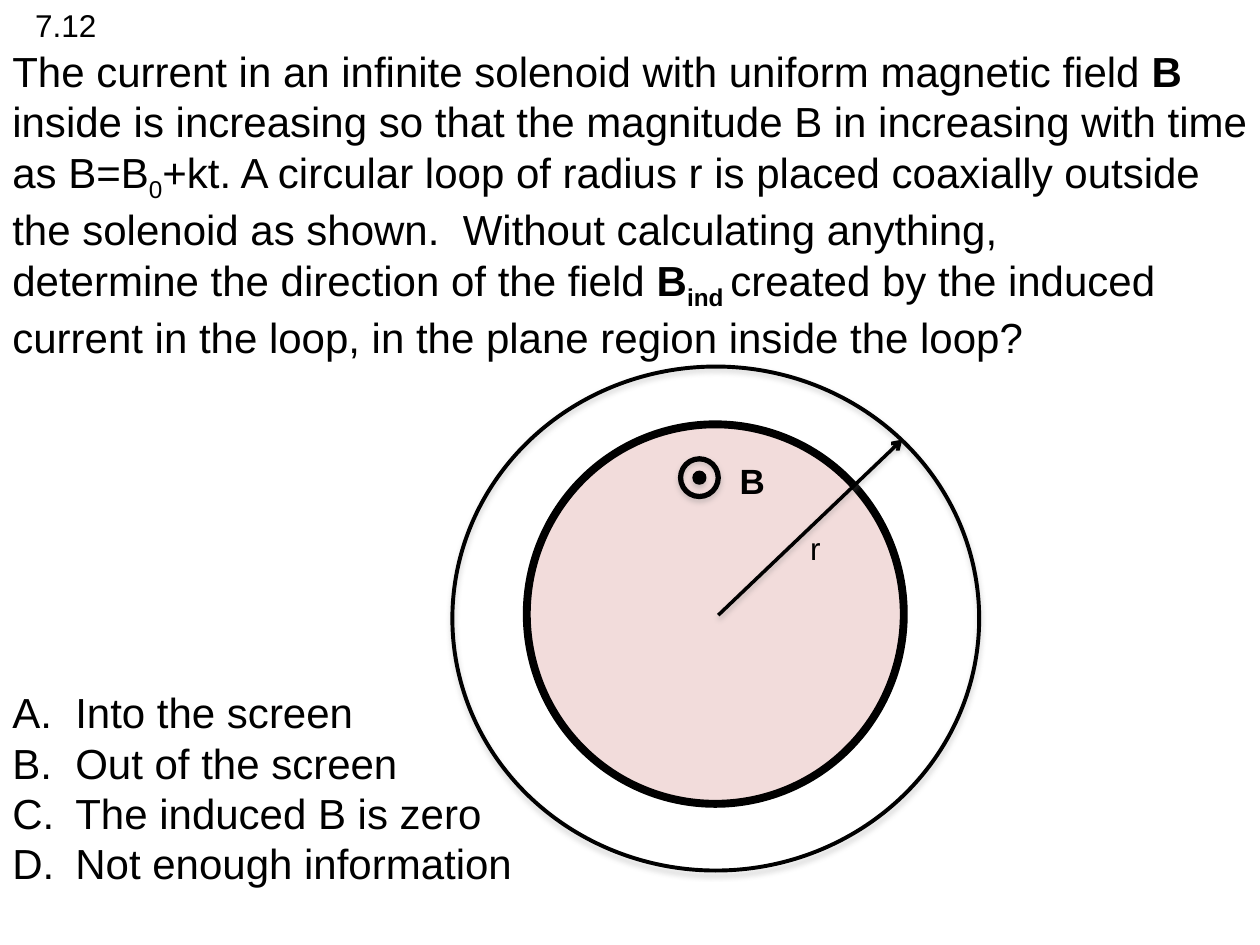
import pptx
import pptx.dml.color
import pptx.enum.shapes
import pptx.enum.text
import pptx.oxml
import pptx.oxml.ns
import pptx.util
from pptx.util import Cm

BLACK = "000000"
ROSE = "F2DCDB"
GREY = "808080"
ANSWERS = ["Into the screen", "Out of the screen",
           "The induced B is zero", "Not enough information"]
# Each span is (text, bold, subscript); None is a line break.
QUESTION = [
    ("The current in an infinite solenoid with uniform magnetic field ", False, False),
    ("B", True, False),
    (" inside is increasing so that the magnitude B in increasing with time as B=B",
     False, False),
    ("0", False, True),
    ("+kt. A circular loop of radius r is placed coaxially outside the solenoid as shown.  "
     "Without calculating anything,", False, False),
    None,
    ("determine the direction of the field ", False, False),
    ("B", True, False),
    ("ind ", True, True),
    ("created by the induced current in the loop, in the plane region inside the loop?",
     False, False),
]


def colour(value):
    return pptx.dml.color.RGBColor.from_string(value)


def add_xml(parent, tag, **attributes):
    child = parent.makeelement(pptx.oxml.ns.qn(tag), attributes)
    parent.append(child)
    return child


class Sketch:
    """Holds the text style and the slide being drawn."""

    def __init__(self, page, font="Arial"):
        self.page = page
        self.font = font

    def format_span(self, span, size, bold=False, subscript=False):
        span.font.name = self.font
        span.font.size = pptx.util.Pt(size)
        span.font.bold = bold
        span.font.color.rgb = colour(BLACK)
        if subscript:
            span.font._element.set("baseline", "-25000")

    def text_box(self, left, top, width, height, wrap=True, grow=True):
        box = self.page.shapes.add_textbox(Cm(left), Cm(top), Cm(width), Cm(height))
        frame = box.text_frame
        frame.word_wrap = wrap
        if grow:
            frame.auto_size = pptx.enum.text.MSO_AUTO_SIZE.SHAPE_TO_FIT_TEXT
        return frame

    def label(self, text, left, top, width, height, size=18, bold=False, wrap=True):
        frame = self.text_box(left, top, width, height, wrap)
        frame.text = text
        self.format_span(frame.paragraphs[0].runs[0], size, bold)

    def question(self, spans, left, top, width, height, size=24):
        frame = self.text_box(left, top, width, height, grow=False)
        frame.vertical_anchor = pptx.enum.text.MSO_ANCHOR.MIDDLE
        para = frame.paragraphs[0]
        for entry in spans:
            if entry is None:
                para.add_line_break()
                continue
            text, bold, subscript = entry
            span = para.add_run()
            span.text = text
            self.format_span(span, size, bold, subscript)

    def lettered_list(self, items, left, top, width, height, size=24):
        frame = self.text_box(left, top, width, height)
        frame.text = "\n".join(items)
        for para in frame.paragraphs:
            properties = para._p.get_or_add_pPr()
            properties.set("marL", str(Cm(1.27)))
            properties.set("indent", str(Cm(-1.27)))
            add_xml(properties, "a:buFont", typeface=self.font)
            add_xml(properties, "a:buAutoNum", type="alphaUcPeriod")
            self.format_span(para.runs[0], size)

    def shade(self, shape, opacity, distance):
        """Add a soft shadow that falls straight down."""
        effects = add_xml(shape._element.spPr, "a:effectLst")
        shadow = add_xml(effects, "a:outerShdw", blurRad=str(pptx.util.Pt(3.1)),
                         dist=str(pptx.util.Pt(distance)), dir="5400000",
                         rotWithShape="0")
        tint = add_xml(shadow, "a:srgbClr", val=GREY)
        add_xml(tint, "a:alpha", val=str(opacity * 1000))

    def ellipse(self, x, y, width, height, line, fill=None, shaded=True, group=None):
        """Draw an ellipse centred on x, y."""
        shape = (group or self.page).shapes.add_shape(
            pptx.enum.shapes.MSO_SHAPE.OVAL,
            Cm(x - width / 2), Cm(y - height / 2), Cm(width), Cm(height))
        if fill:
            shape.fill.solid()
            shape.fill.fore_color.rgb = colour(fill)
        else:
            shape.fill.background()
        shape.line.color.rgb = colour(BLACK)
        shape.line.width = pptx.util.Pt(line)
        if shaded:
            self.shade(shape, 35, 1.8)
        else:
            shape.shadow.inherit = False

    def field_out_of_page(self, x, y):
        group = self.page.shapes.add_group_shape()
        self.ellipse(x, y, 0.76, 0.76, 3, group=group)
        self.ellipse(x, y, 0.26, 0.26, 0.75, BLACK, group=group)

    def arrow(self, x1, y1, x2, y2, width=2):
        line = self.page.shapes.add_connector(
            pptx.enum.shapes.MSO_CONNECTOR.STRAIGHT, Cm(x1), Cm(y1), Cm(x2), Cm(y2))
        line.line.color.rgb = colour(BLACK)
        line.line.width = pptx.util.Pt(width)
        add_xml(line.line._get_or_add_ln(), "a:tailEnd", type="arrow")
        self.shade(line, 38, 1.6)


def main():
    deck = pptx.Presentation()
    deck.slide_width, deck.slide_height = Cm(25.4), Cm(19.05)
    sketch = Sketch(deck.slides.add_slide(deck.slide_layouts[6]))

    sketch.ellipse(14.42, 12.38, 7.6, 7.65, 4.5, ROSE, shaded=False)
    sketch.question(QUESTION, 0, 0.84, 25.4, 6.53)
    sketch.lettered_list(ANSWERS, 0, 13.72, 17.45, 4.32)
    sketch.label("B", 14.66, 9.14, 1.02, 1.09, size=20, bold=True)
    sketch.field_out_of_page(14.1, 9.63)
    sketch.ellipse(14.43, 12.47, 10.62, 10.16, 2.25)
    sketch.arrow(14.48, 12.4, 18.19, 8.86)
    sketch.label("r", 16.08, 10.54, 1.04, 1.02)
    sketch.label("7.12", 0.46, 0, 1.75, 1.02, wrap=False)

    deck.save("out.pptx")


if __name__ == "__main__":
    main()
